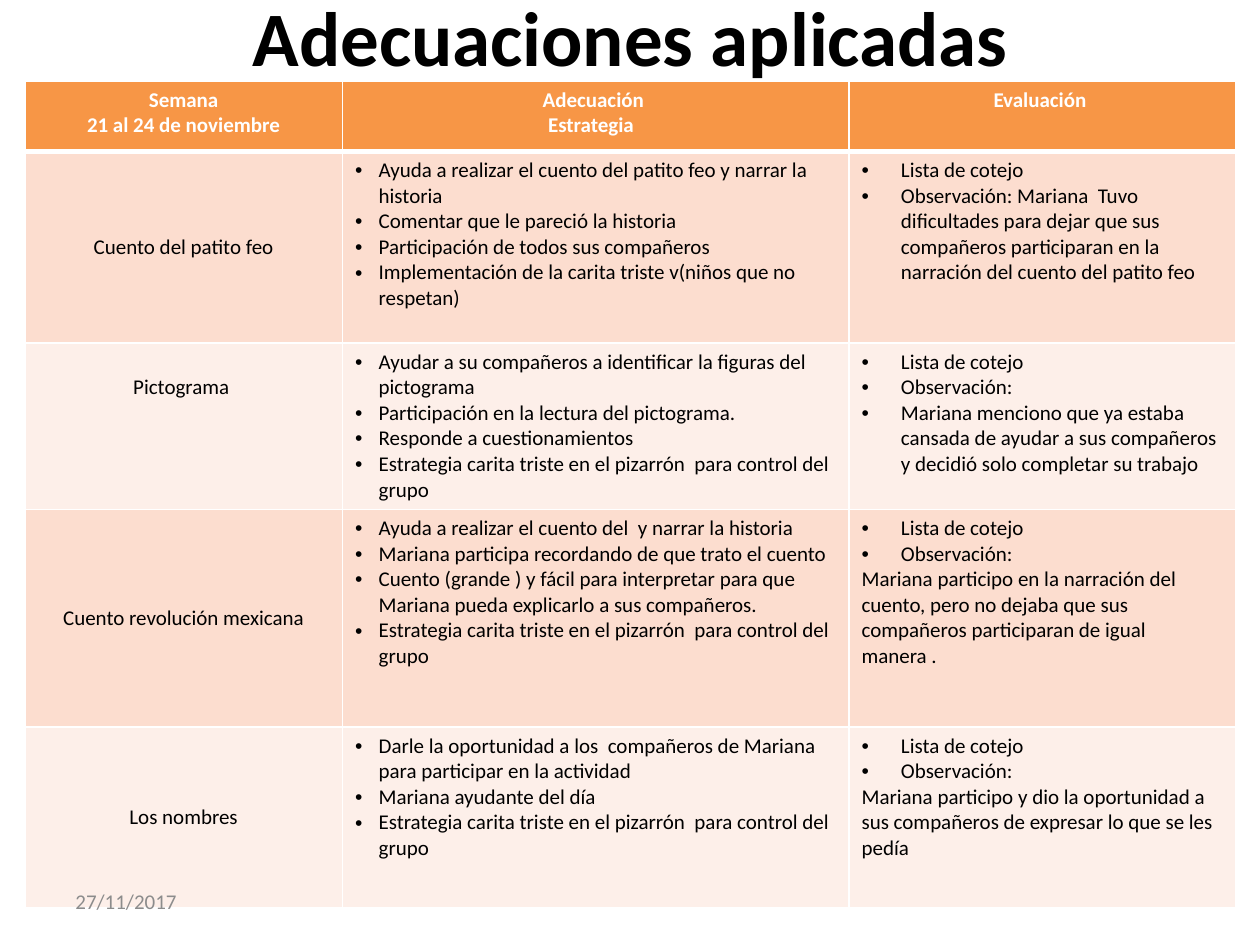
from dataclasses import dataclass

from lxml.etree import SubElement
from pptx import Presentation
from pptx.dml.color import RGBColor
from pptx.enum.text import MSO_ANCHOR, PP_ALIGN
from pptx.oxml.ns import qn
from pptx.slide import Slide
from pptx.table import Table, _Cell
from pptx.text.text import TextFrame, _Paragraph
from pptx.util import Pt

FONT = "Calibri"
BLACK = RGBColor(0x00, 0x00, 0x00)
WHITE = RGBColor(0xFF, 0xFF, 0xFF)
GREY = RGBColor(0x8C, 0x8C, 0x8C)
ORANGE = RGBColor(0xF7, 0x96, 0x46)
BANDS = (RGBColor(0xFC, 0xDD, 0xCF), RGBColor(0xFD, 0xEF, 0xE9))

COLUMN_WIDTHS = (181.5, 289.5, 221)
HEADER_HEIGHT = 40.3
STRATEGY_INDENT = 13.5
EVALUATION_INDENT = 22.5

CHECKLIST = "Lista de cotejo"
OBSERVATION = "Observación:"
SAD_FACE = "Estrategia carita triste en el pizarrón  para control del grupo"

HEADERS = (
    ("Semana", "21 al 24 de noviembre"),
    ("Adecuación ", "Estrategia  "),
    ("Evaluación ",),
)


@dataclass(frozen=True)
class Activity:
    name: str
    height: float
    strategies: tuple[str, ...]
    evaluation: tuple[str, ...]
    remark: str = ""
    top_gap: float | None = None


ACTIVITIES = (
    Activity(
        "Cuento del patito feo", 109.4,
        ("Ayuda a realizar el cuento del patito feo y narrar la historia",
         "Comentar que le pareció la historia",
         "Participación de todos sus compañeros",
         "Implementación de la carita triste v(niños que no respetan)"),
        (CHECKLIST,
         "Observación: Mariana  Tuvo dificultades para dejar que sus compañeros "
         "participaran en la narración del cuento del patito feo"),
    ),
    Activity(
        "Pictograma ", 95.2,
        ("Ayudar a su compañeros a identificar la figuras del pictograma",
         "Participación en la lectura del pictograma.",
         "Responde a cuestionamientos",
         SAD_FACE),
        (CHECKLIST, OBSERVATION,
         "Mariana menciono que ya estaba cansada de ayudar a sus compañeros "
         "y decidió solo completar su trabajo"),
        top_gap=16,
    ),
    Activity(
        "Cuento revolución mexicana", 124.3,
        ("Ayuda a realizar el cuento del  y narrar la historia",
         "Mariana participa recordando de que trato el cuento",
         "Cuento (grande ) y fácil para interpretar para que Mariana pueda "
         "explicarlo a sus compañeros.",
         SAD_FACE),
        (CHECKLIST, OBSERVATION),
        "Mariana participo en la narración del cuento, pero no dejaba que sus "
        "compañeros participaran de igual manera .",
    ),
    Activity(
        "Los nombres", 103.5,
        ("Darle la oportunidad a los  compañeros de Mariana para participar "
         "en la actividad",
         "Mariana ayudante del día",
         SAD_FACE),
        (CHECKLIST, OBSERVATION),
        "Mariana participo y dio la oportunidad a sus compañeros de expresar "
        "lo que se les pedía",
    ),
)


def add_bullet(paragraph: _Paragraph, indent: float) -> None:
    properties = paragraph._p.get_or_add_pPr()
    properties.set("marL", str(Pt(indent)))
    properties.set("indent", str(-Pt(indent)))
    SubElement(properties, qn("a:buFont"), typeface="Arial")
    SubElement(properties, qn("a:buChar"), char="•")


def write(frame: TextFrame, text: str, *, size: float = 12, color: RGBColor = BLACK,
          bold: bool = False, align: PP_ALIGN = PP_ALIGN.LEFT, indent: float = 0,
          spacing: float | None = None) -> None:
    """Add a paragraph, using the frame's first one while it is still empty."""
    first = frame.paragraphs[0]
    paragraph = frame.add_paragraph() if first.runs else first
    paragraph.alignment = align
    if spacing:
        paragraph.line_spacing = spacing
    if indent:
        add_bullet(paragraph, indent)
    run = paragraph.add_run()
    run.text = text
    run.font.name = FONT
    run.font.size = Pt(size)
    run.font.bold = bold
    run.font.color.rgb = color


def style_cell(cell: _Cell, fill: RGBColor, top_width: float, bottom_width: float) -> None:
    properties = cell._tc.get_or_add_tcPr()
    widths = {"a:lnL": 1, "a:lnR": 1, "a:lnT": top_width, "a:lnB": bottom_width}
    for side, width in widths.items():
        line = SubElement(properties, qn(side), w=str(Pt(width)))
        SubElement(SubElement(line, qn("a:solidFill")), qn("a:srgbClr"), val=str(WHITE))
    cell.fill.solid()
    cell.fill.fore_color.rgb = fill


def fill_header(table: Table) -> None:
    for cell, lines in zip(table.rows[0].cells, HEADERS):
        style_cell(cell, ORANGE, 1, 3)
        for line in lines:
            write(cell.text_frame, line, color=WHITE, bold=True, align=PP_ALIGN.CENTER)


def fill_activity(table: Table, number: int, activity: Activity) -> None:
    cells = tuple(table.rows[number].cells)
    for cell in cells:
        style_cell(cell, BANDS[(number - 1) % 2], 3 if number == 1 else 1, 1)
    name, strategies, evaluation = cells
    if activity.top_gap is None:
        name.vertical_anchor = MSO_ANCHOR.MIDDLE
        write(name.text_frame, activity.name, align=PP_ALIGN.CENTER)
    else:
        name.margin_top, name.margin_bottom = Pt(activity.top_gap), Pt(0)
        write(name.text_frame, activity.name, align=PP_ALIGN.CENTER, spacing=1.15)
    for strategy in activity.strategies:
        write(strategies.text_frame, strategy, indent=STRATEGY_INDENT)
    for point in activity.evaluation:
        write(evaluation.text_frame, point, indent=EVALUATION_INDENT)
    if activity.remark:
        write(evaluation.text_frame, activity.remark)


def add_activity_table(slide: Slide) -> None:
    heights = (HEADER_HEIGHT, *(activity.height for activity in ACTIVITIES))
    table = slide.shapes.add_table(
        len(heights), len(COLUMN_WIDTHS), Pt(14.2), Pt(46.2),
        Pt(sum(COLUMN_WIDTHS)), Pt(sum(heights))).table
    for column, width in zip(table.columns, COLUMN_WIDTHS):
        column.width = Pt(width)
    for row, height in zip(table.rows, heights):
        row.height = Pt(height)
    fill_header(table)
    for number, activity in enumerate(ACTIVITIES, start=1):
        fill_activity(table, number, activity)


def add_label(slide: Slide, left: float, top: float, width: float, height: float) -> TextFrame:
    frame = slide.shapes.add_textbox(Pt(left), Pt(top), Pt(width), Pt(height)).text_frame
    frame.word_wrap = True
    frame.vertical_anchor = MSO_ANCHOR.MIDDLE
    return frame


def main() -> None:
    presentation = Presentation()
    presentation.slide_width, presentation.slide_height = Pt(720), Pt(540)
    slide = presentation.slides.add_slide(presentation.slide_layouts[6])
    title = add_label(slide, 36.5, -24.5, 648, 90)
    write(title, "Adecuaciones aplicadas", size=44, bold=True, align=PP_ALIGN.CENTER)
    add_activity_table(slide)
    date = add_label(slide, 36, 500.5, 168, 28.75)
    write(date, "27/11/2017", color=GREY)
    presentation.save("out.pptx")


if __name__ == "__main__":
    main()
